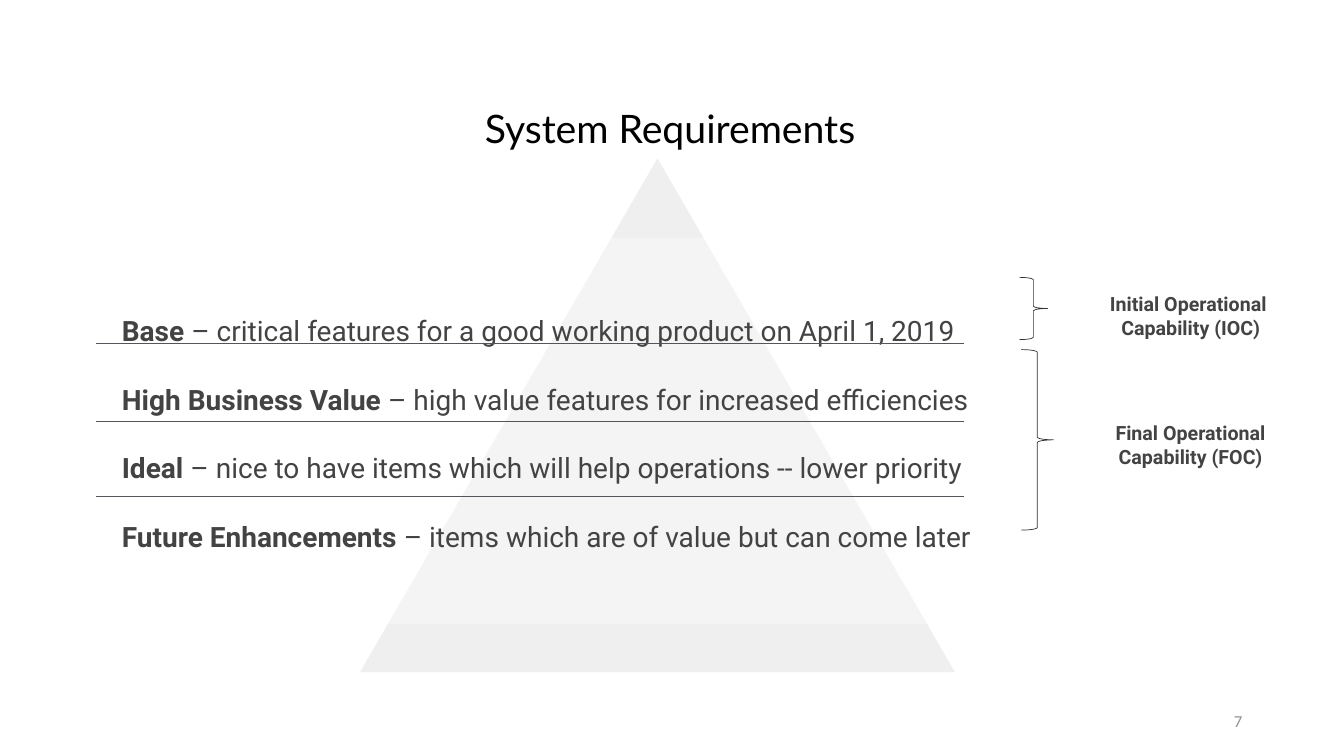
from dataclasses import dataclass

from lxml.etree import SubElement
from pptx import Presentation
from pptx.dml.color import RGBColor
from pptx.enum.shapes import MSO_CONNECTOR, MSO_SHAPE
from pptx.enum.text import MSO_ANCHOR, MSO_AUTO_SIZE, PP_ALIGN
from pptx.oxml.ns import qn
from pptx.util import Cm, Pt


@dataclass(frozen=True)
class Theme:
    title: RGBColor = RGBColor(0x00, 0x00, 0x00)
    text: RGBColor = RGBColor(0x43, 0x43, 0x43)
    number: RGBColor = RGBColor(0x92, 0x92, 0x92)
    rule: RGBColor = RGBColor(0x54, 0x55, 0x5A)
    brace: RGBColor = RGBColor(0x32, 0x31, 0x2F)
    pyramid: RGBColor = RGBColor(0xEF, 0xEF, 0xEF)
    veil: RGBColor = RGBColor(0xFF, 0xFF, 0xFF)
    veil_opacity: int = 37000
    title_size: Pt = Pt(28)
    body_size: Pt = Pt(20)
    label_size: Pt = Pt(14)
    number_size: Pt = Pt(12)


THEME = Theme()
LEVELS = [
    ("Base", " – critical features for a good working product on April 1, 2019"),
    ("High Business Value ", "– high value features for increased efficiencies"),
    ("Ideal", " – nice to have items which will help operations -- lower priority"),
    ("Future Enhancements", " – items which are of value but can come later"),
]
RULE_TOPS = (8.66, 10.62, 12.5)
LEVEL_GAP = Pt(21.3)
TITLE_FONT = dict(name="Lato", size=THEME.title_size, color=THEME.title)
BODY_FONT = dict(name="Roboto", size=THEME.body_size, color=THEME.text)
LABEL_FONT = dict(name="Roboto", size=THEME.label_size, color=THEME.text, bold=True)
NUMBER_FONT = dict(name="Calibri", size=THEME.number_size, color=THEME.number)


def set_attrs(target, **values):
    for name, value in values.items():
        setattr(target, name, value)


def add_run(p, text, color, **font):
    r = p.add_run()
    r.text = text
    r.font.color.rgb = color
    set_attrs(r.font, **font)


def add_title(s, text, box):
    sp = s.shapes.title
    set_attrs(sp, **dict(zip(("left", "top", "width", "height"), map(Cm, box))))
    set_attrs(sp.text_frame, word_wrap=False, auto_size=MSO_AUTO_SIZE.NONE,
              vertical_anchor=MSO_ANCHOR.TOP)
    p = sp.text_frame.paragraphs[0]
    p.alignment = PP_ALIGN.LEFT
    add_run(p, text, **TITLE_FONT)


def add_shape(s, kind, box, fill=None, line=None):
    sp = s.shapes.add_shape(kind, *map(Cm, box))
    sp.shadow.inherit = False
    if fill is None:
        sp.fill.background()
    else:
        sp.fill.solid()
        sp.fill.fore_color.rgb = fill
    if line is None:
        sp.line.fill.background()
    else:
        sp.line.color.rgb = line
        sp.line.width = Pt(0.5)
    return sp


def add_veil(s, box):
    """Add a translucent text panel and return its text frame."""
    sp = add_shape(s, MSO_SHAPE.RECTANGLE, box, THEME.veil)
    color = sp._element.spPr.find(qn("a:solidFill")).find(qn("a:srgbClr"))
    SubElement(color, qn("a:alpha"), val=str(THEME.veil_opacity))
    tf = sp.text_frame
    set_attrs(tf, word_wrap=True, vertical_anchor=MSO_ANCHOR.MIDDLE)
    for side in ("left", "top", "right", "bottom"):
        setattr(tf, f"margin_{side}", Cm(0.33))
    return tf


def add_text_box(s, box, anchor=MSO_ANCHOR.TOP):
    tf = s.shapes.add_textbox(*map(Cm, box)).text_frame
    set_attrs(tf, word_wrap=True, vertical_anchor=anchor)
    return tf


def write_lines(tf, lines, align, font):
    for i, text in enumerate(lines):
        p = tf.add_paragraph() if i else tf.paragraphs[0]
        p.alignment = align
        add_run(p, text, **font)


def write_levels(tf):
    for i, (name, detail) in enumerate(LEVELS):
        p = tf.add_paragraph() if i else tf.paragraphs[0]
        set_attrs(p, alignment=PP_ALIGN.LEFT, line_spacing=1.15)
        if i:
            p.space_before = LEVEL_GAP
        add_run(p, name, bold=True, **BODY_FONT)
        add_run(p, detail, bold=False, **BODY_FONT)
    p.space_after = LEVEL_GAP


def add_rule(s, top):
    cx = s.shapes.add_connector(MSO_CONNECTOR.STRAIGHT, Cm(2.41), Cm(top),
                                Cm(24.28), Cm(top))
    cx.line.color.rgb = THEME.rule
    cx.line.width = Pt(0.75)
    SubElement(cx._element.spPr, qn("a:effectLst"))


def main():
    prs = Presentation()
    set_attrs(prs, slide_width=Cm(33.86), slide_height=Cm(19.05))
    s = prs.slides.add_slide(prs.slide_layouts[5])

    add_title(s, "System Requirements", (11.96, 2.51, 9.96, 1.45))
    number = add_text_box(s, (23.93, 17.65, 7.62, 1.02), MSO_ANCHOR.MIDDLE)
    write_lines(number, ["7"], PP_ALIGN.RIGHT, NUMBER_FONT)

    add_shape(s, MSO_SHAPE.ISOSCELES_TRIANGLE, (9.07, 3.99, 14.99, 12.95), THEME.pyramid)
    write_levels(add_veil(s, (2.74, 5.99, 24.56, 9.73)))
    for top in RULE_TOPS:
        add_rule(s, top)

    initial = add_veil(s, (26.75, 6.93, 6.5, 2.06))
    write_lines(initial, ["Initial Operational ", "Capability (IOC)"],
                PP_ALIGN.CENTER, LABEL_FONT)
    final = add_text_box(s, (27.2, 10.49, 5.59, 1.45))
    write_lines(final, ["Final Operational Capability (FOC)"],
                PP_ALIGN.CENTER, LABEL_FONT)
    for box in ((25.68, 6.99, 0.71, 1.57), (25.73, 8.81, 0.81, 4.55)):
        add_shape(s, MSO_SHAPE.RIGHT_BRACE, box, line=THEME.brace)

    prs.save("out.pptx")


if __name__ == "__main__":
    main()
